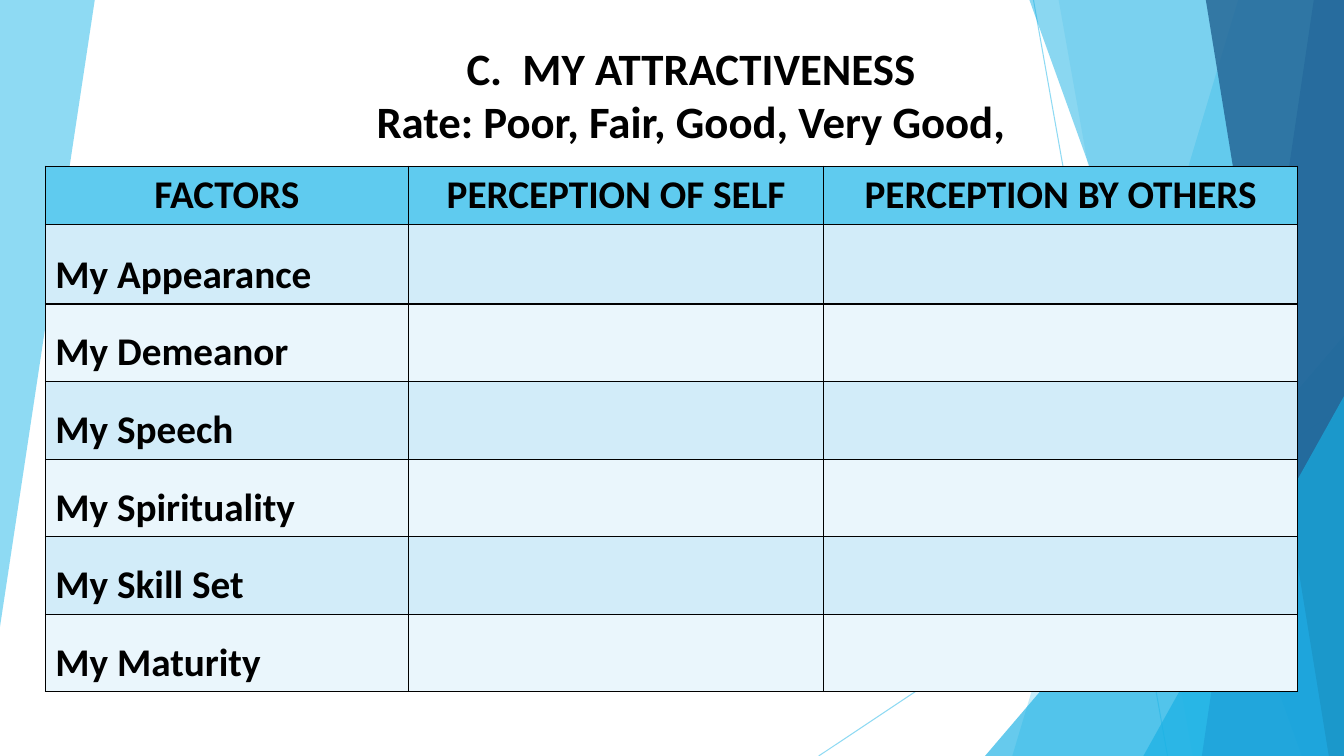
"""Build the attractiveness self-rating slide."""
import dataclasses

import lxml.etree
import pptx
import pptx.dml.color
import pptx.enum.shapes
import pptx.enum.text
import pptx.oxml.ns
import pptx.shapes.base
import pptx.slide
import pptx.table
import pptx.text.text
import pptx.util

Inches = pptx.util.Inches
RGB = pptx.dml.color.RGBColor.from_string
qn = pptx.oxml.ns.qn


@dataclasses.dataclass(frozen=True)
class Theme:
    font: str = "Calibri"
    text: str = "000000"
    sky: str = "5FCBEF"
    cyan: str = "17B0E4"
    blue: str = "2E83C3"
    navy: str = "226292"
    bands: tuple[str, str] = ("D2ECF9", "EAF6FC")
    title_size: int = 32
    table_size: int = 28


@dataclasses.dataclass(frozen=True)
class Facet:
    points: tuple[tuple[float, float], ...]
    color: str
    alpha: int


@dataclasses.dataclass(frozen=True)
class Triangle:
    left: float
    top: float
    color: str
    alpha: int


@dataclasses.dataclass(frozen=True)
class Ray:
    start: tuple[float, float]
    end: tuple[float, float]


THEME = Theme()
WIDTH, HEIGHT = 13.33, 7.5


def right_facet(top: float, bottom: float, color: str, alpha: int) -> Facet:
    """Describe a facet between a slanted edge and the right side of the slide."""
    points = ((top, 0), (WIDTH, 0), (WIDTH, HEIGHT), (bottom, HEIGHT))
    return Facet(points, color, alpha)


DECOR = (
    Facet(((0, 0), (0.94, 0), (0, 6.22)), THEME.sky, 70),
    Ray((10.25, 0), (11.58, HEIGHT)),
    Ray((WIDTH, 4.03), (8.12, HEIGHT)),
    right_facet(12.28, 10.04, THEME.sky, 36),
    right_facet(10.5, 11.83, THEME.sky, 20),
    Triangle(9.77, 3.33, THEME.cyan, 66),
    right_facet(10.21, 12.91, THEME.cyan, 50),
    right_facet(13.03, 11.92, THEME.blue, 70),
    right_facet(11.96, 13.18, THEME.navy, 80),
    Triangle(11.34, 3.93, THEME.cyan, 66),
)
TITLE = ("C.  MY ATTRACTIVENESS", "Rate: Poor, Fair, Good, Very Good,")
HEADERS = ("FACTORS", "PERCEPTION OF SELF", "PERCEPTION BY OTHERS")
FACTORS = ("My Appearance", "My Demeanor", "My Speech", "My Spirituality",
           "My Skill Set", "My Maturity")
COLUMNS = (3.6, 4.12, 4.7)
ROWS = (0.57, 0.79) + (0.77,) * 5


def set_alpha(sp: pptx.shapes.base.BaseShape, percent: int) -> None:
    """Make the explicit colours of a shape translucent."""
    for color in sp._element.iter(qn("a:srgbClr")):
        lxml.etree.SubElement(color, qn("a:alpha"), val=str(percent * 1000))


def draw_decor(slide: pptx.slide.Slide, item: Facet | Triangle | Ray) -> None:
    """Draw one background element."""
    if isinstance(item, Ray):
        x1, y1, x2, y2 = map(Inches, item.start + item.end)
        line = slide.shapes.add_connector(
            pptx.enum.shapes.MSO_CONNECTOR.STRAIGHT, x1, y1, x2, y2)
        line.line.color.rgb = RGB(THEME.sky)
        line.line.width = pptx.util.Pt(0.75)
        lxml.etree.SubElement(line._element.spPr, qn("a:effectLst"))
        set_alpha(line, 70)
        return
    if isinstance(item, Triangle):
        sp = slide.shapes.add_shape(
            pptx.enum.shapes.MSO_SHAPE.ISOSCELES_TRIANGLE,
            Inches(item.left), Inches(item.top),
            Inches(WIDTH - item.left), Inches(HEIGHT - item.top))
        sp.adjustments[0] = 1
    else:
        points = [(Inches(x), Inches(y)) for x, y in item.points]
        builder = slide.shapes.build_freeform(*points[0])
        builder.add_line_segments(points[1:], close=True)
        sp = builder.convert_to_shape()
    sp.shadow.inherit = False
    sp.fill.solid()
    sp.fill.fore_color.rgb = RGB(item.color)
    sp.line.fill.background()
    set_alpha(sp, item.alpha)


def add_run(p: pptx.text.text._Paragraph, text: str, size: int) -> None:
    """Add a bold run in the slide's type."""
    r = p.add_run()
    r.text = text
    r.font.name = THEME.font
    r.font.size = pptx.util.Pt(size)
    r.font.bold = True
    r.font.color.rgb = RGB(THEME.text)


def fill_title(slide: pptx.slide.Slide) -> None:
    """Place the title above the background and write its lines."""
    title = slide.shapes.title
    title.left, title.top = Inches(0.38), Inches(0.35)
    title.width, title.height = Inches(12.95), Inches(1.25)
    slide.shapes._spTree.append(title._element)
    tf = title.text_frame
    tf.word_wrap = True
    tf.auto_size = pptx.enum.text.MSO_AUTO_SIZE.NONE
    tf.vertical_anchor = pptx.enum.text.MSO_ANCHOR.TOP
    for i, text in enumerate(TITLE):
        p = tf.add_paragraph() if i else tf.paragraphs[0]
        p.alignment = pptx.enum.text.PP_ALIGN.CENTER
        add_run(p, text, THEME.title_size)


def format_cell(cell: pptx.table._Cell, color: str) -> None:
    """Give a cell its borders and fill."""
    props = cell._tc.get_or_add_tcPr()
    for side in ("lnL", "lnR", "lnT", "lnB"):
        ln = lxml.etree.SubElement(props, qn(f"a:{side}"), w=str(pptx.util.Pt(1)))
        fill = lxml.etree.SubElement(ln, qn("a:solidFill"))
        lxml.etree.SubElement(fill, qn("a:srgbClr"), val=THEME.text)
    cell.fill.solid()
    cell.fill.fore_color.rgb = RGB(color)


def add_rating_table(slide: pptx.slide.Slide) -> None:
    """Add the table of factors with empty rating columns."""
    table = slide.shapes.add_table(
        len(ROWS), len(COLUMNS), Inches(0.45), Inches(1.65),
        Inches(sum(COLUMNS)), Inches(sum(ROWS))).table
    for column, width in zip(table.columns, COLUMNS):
        column.width = Inches(width)
    for row, height in zip(table.rows, ROWS):
        row.height = Inches(height)
    content = [HEADERS] + [(factor, "", "") for factor in FACTORS]
    for i, texts in enumerate(content):
        for j, text in enumerate(texts):
            cell = table.cell(i, j)
            format_cell(cell, THEME.bands[(i - 1) % 2] if i else THEME.sky)
            cell.vertical_anchor = pptx.enum.text.MSO_ANCHOR.BOTTOM
            p = cell.text_frame.paragraphs[0]
            if i == 0:
                p.alignment = pptx.enum.text.PP_ALIGN.CENTER
            if text:
                add_run(p, text, THEME.table_size)


def main() -> None:
    """Assemble and save the presentation."""
    prs = pptx.Presentation()
    prs.slide_width, prs.slide_height = Inches(WIDTH), Inches(HEIGHT)
    slide = prs.slides.add_slide(prs.slide_layouts.get_by_name("Title Only"))
    for item in DECOR:
        draw_decor(slide, item)
    fill_title(slide)
    add_rating_table(slide)
    prs.save("out.pptx")


if __name__ == "__main__":
    main()
